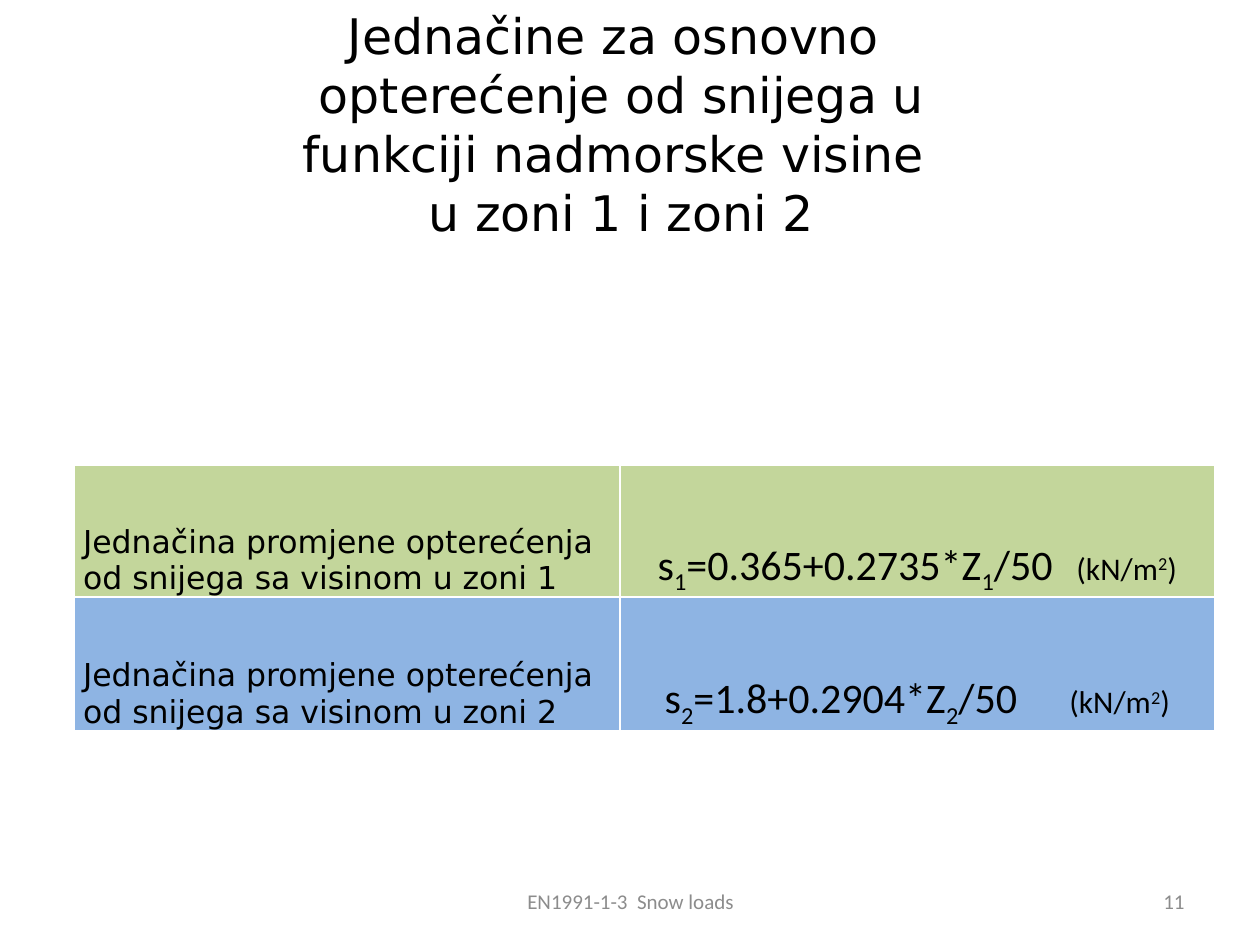
from lxml import etree
from pptx import Presentation
from pptx.dml.color import RGBColor
from pptx.enum.text import MSO_ANCHOR, PP_ALIGN
from pptx.oxml.ns import qn
from pptx.util import Inches, Pt

LEFT, CENTER, RIGHT = PP_ALIGN.LEFT, PP_ALIGN.CENTER, PP_ALIGN.RIGHT
MIDDLE, BOTTOM = MSO_ANCHOR.MIDDLE, MSO_ANCHOR.BOTTOM
BLACK = RGBColor(0x00, 0x00, 0x00)
GRAY = RGBColor(0x8C, 0x8C, 0x8C)
GREEN = RGBColor(0xC3, 0xD6, 0x9B)
BLUE = RGBColor(0x8E, 0xB4, 0xE3)
WHITE = RGBColor(0xFF, 0xFF, 0xFF)
HEADING_FONT, BODY_FONT = "DejaVu Sans", "Calibri"
SUBSCRIPT, SUPERSCRIPT = -25000, 30000

TITLE_LINES = [
    "Jednačine za osnovno ",
    "opterećenje od snijega u",
    "funkciji nadmorske visine ",
    "u zoni 1 i zoni 2",
]
ZONES = [
    ("1", "=0.365+0.2735*Z", "  (kN/m", GREEN),
    ("2", "=1.8+0.2904*Z", "      (kN/m", BLUE),
]
FOOTERS = [
    ("EN1991-1-3  Snow loads", 3.42, 3.17, CENTER),
    ("11", 7.17, 2.33, RIGHT),
]
COLUMN_WIDTHS = [4.33, 4.72]
ROW_HEIGHTS = [1.74, 1.06, 1.06]


def add_run(paragraph, text, size, font, color=BLACK, baseline=0):
    run = paragraph.add_run()
    run.text = text
    run.font.size = Pt(size)
    run.font.name = font
    run.font.color.rgb = color
    if baseline:
        run.font._element.set("baseline", str(baseline))


def add_text_box(slide, left, top, width, height, alignment):
    box = slide.shapes.add_textbox(*map(Inches, (left, top, width, height)))
    box.text_frame.word_wrap = True
    box.text_frame.vertical_anchor = MIDDLE
    paragraph = box.text_frame.paragraphs[0]
    paragraph.alignment = alignment
    return box.text_frame, paragraph


def style_cell(cell, color=None, bottom_width=1):
    cell.margin_left = cell.margin_right = Inches(0.07)
    cell.margin_top = cell.margin_bottom = 0
    cell.vertical_anchor = BOTTOM
    properties = cell._tc.get_or_add_tcPr()
    for side, width in (("L", 1), ("R", 1), ("T", 1), ("B", bottom_width)):
        line = etree.SubElement(properties, qn(f"a:ln{side}"), w=str(Pt(width)))
        fill = etree.SubElement(line, qn("a:solidFill"))
        etree.SubElement(fill, qn("a:srgbClr"), val=str(WHITE))
    if color is None:
        cell.fill.background()
    else:
        cell.fill.solid()
        cell.fill.fore_color.rgb = color


def add_title(slide):
    frame, paragraph = add_text_box(slide, 0.43, 0.21, 9, 2.2, CENTER)
    frame.margin_bottom = Inches(0.71)
    for index, line in enumerate(TITLE_LINES):
        if index:
            paragraph.add_line_break()
        add_run(paragraph, line, 28, HEADING_FONT)


def add_equation_table(slide):
    frame = slide.shapes.add_table(
        len(ROW_HEIGHTS), len(COLUMN_WIDTHS), Inches(0.59), Inches(1.94),
        Inches(sum(COLUMN_WIDTHS)), Inches(sum(ROW_HEIGHTS)))
    table = frame.table
    table.first_row = table.horz_banding = False
    for column, width in zip(table.columns, COLUMN_WIDTHS):
        column.width = Inches(width)
    for row, height in zip(table.rows, ROW_HEIGHTS):
        row.height = Inches(height)
    table.cell(0, 0).merge(table.cell(0, 1))
    for cell in table.rows[0].cells:
        style_cell(cell, bottom_width=3)
    for row, (zone, formula, unit, color) in enumerate(ZONES, start=1):
        label, equation = table.cell(row, 0), table.cell(row, 1)
        style_cell(label, color)
        style_cell(equation, color)
        paragraph = label.text_frame.paragraphs[0]
        paragraph.alignment = LEFT
        add_run(paragraph, "Jednačina promjene opterećenja od snijega sa visinom "
                f"u zoni {zone}", 18, HEADING_FONT)
        paragraph = equation.text_frame.paragraphs[0]
        paragraph.alignment = CENTER
        for text, size, baseline in (
                ("s", 24, 0), (zone, 24, SUBSCRIPT), (formula, 24, 0),
                (zone, 24, SUBSCRIPT), ("/50 ", 24, 0), (unit, 18, 0),
                ("2", 18, SUPERSCRIPT), (")", 18, 0)):
            add_run(paragraph, text, size, BODY_FONT, baseline=baseline)


def main():
    presentation = Presentation()
    presentation.slide_width, presentation.slide_height = Inches(10), Inches(7.5)
    slide = presentation.slides.add_slide(presentation.slide_layouts[6])
    add_title(slide)
    add_equation_table(slide)
    for text, left, width, alignment in FOOTERS:
        paragraph = add_text_box(slide, left, 6.95, width, 0.4, alignment)[1]
        add_run(paragraph, text, 12, BODY_FONT, GRAY)
    presentation.save("out.pptx")


if __name__ == "__main__":
    main()
